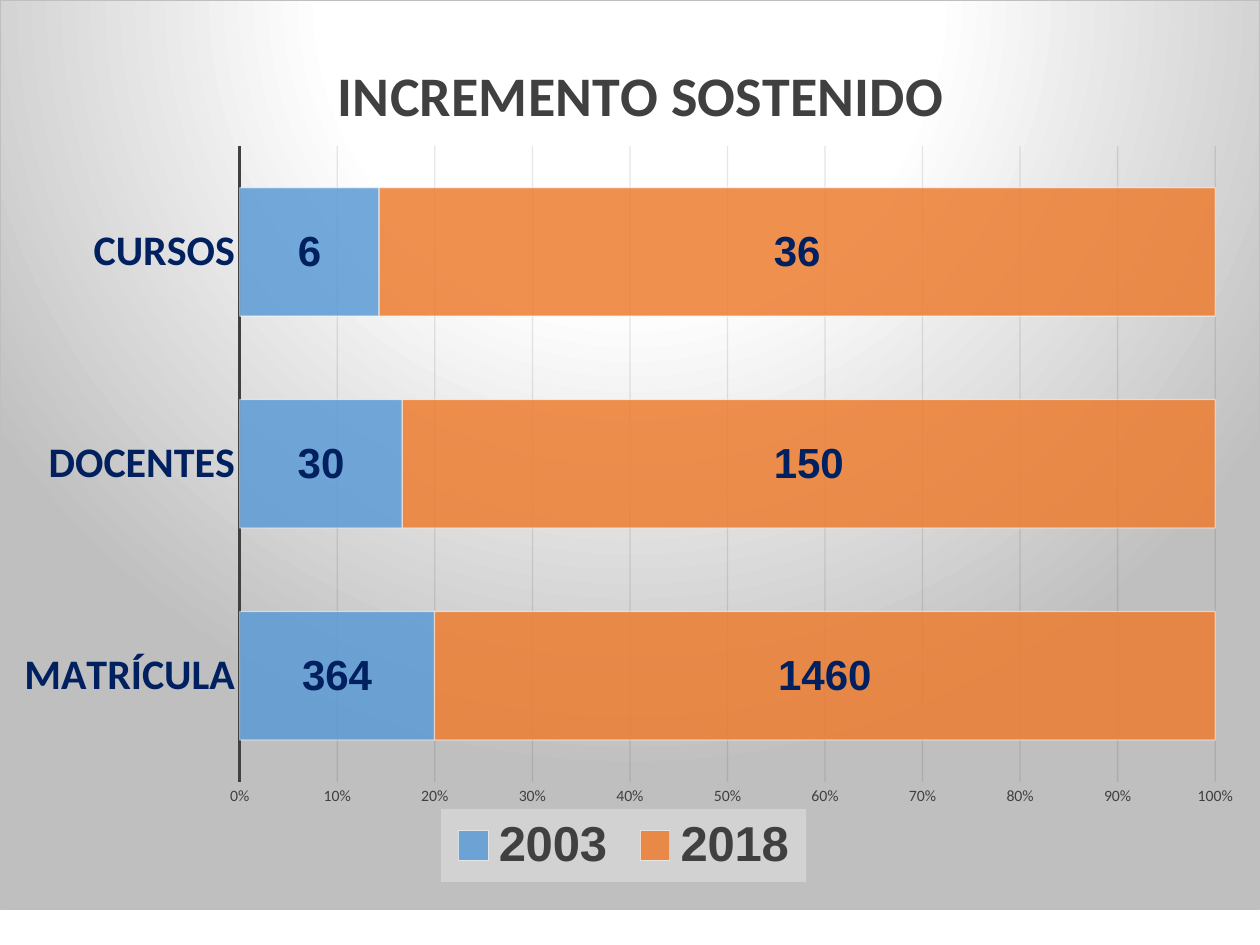
from lxml import etree
from pptx import Presentation
from pptx.chart.data import CategoryChartData
from pptx.dml.color import RGBColor
from pptx.enum.chart import XL_CHART_TYPE, XL_LEGEND_POSITION, XL_TICK_MARK
from pptx.oxml import parse_xml
from pptx.oxml.ns import nsdecls, qn
from pptx.util import Inches, Pt

COLORS = {"2003": "5B9BD5", "2018": "ED7D31", "navy": "002060", "gray": "404040",
          "border": "BFBFBF", "grid": "0D0D0D", "white": "FFFFFF", "legend": "F2F2F2"}


def style_font(font, name, size, color, bold):
    values = {"name": name, "size": Pt(size), "bold": bold}
    for attribute, value in values.items():
        setattr(font, attribute, value)
    font.color.rgb = RGBColor.from_string(COLORS[color])


def place(part, index, **fractions):
    for old_layout in part.findall(qn("c:layout")):
        part.remove(old_layout)
    layout = parse_xml(f"<c:layout {nsdecls('c')}><c:manualLayout/></c:layout>")
    for key, value in fractions.items():
        etree.SubElement(layout[0], qn(f"c:{key}")).set("val", str(value))
    part.insert(index, layout)


prs = Presentation()
prs.slide_width, prs.slide_height = Inches(10), Inches(7.5)
slide = prs.slides.add_slide(prs.slide_layouts[6])

growth = CategoryChartData()
growth.categories = ["MATRÍCULA", "DOCENTES", "CURSOS"]
growth.add_series("2003", (364, 30, 6))
growth.add_series("2018", (1460, 150, 36))
chart = slide.shapes.add_chart(XL_CHART_TYPE.BAR_STACKED_100, 0, 0,
                               Inches(10), Inches(7.22), growth).chart
chart.font.name, chart.font.size = "Calibri", Pt(10)

chart.has_title = True
heading = chart.chart_title.text_frame
heading.text = "INCREMENTO SOSTENIDO"
style_font(heading.paragraphs[0].runs[0].font, "Calibri", 32, "gray", True)

plot = chart.plots[0]
plot.gap_width, plot.overlap, plot.vary_by_categories = 65, 100, False
faded = []
for series in plot.series:
    series.format.fill.solid()
    series.format.fill.fore_color.rgb = RGBColor.from_string(COLORS[series.name])
    series.format.line.color.rgb = RGBColor.from_string(COLORS["white"])
    series.format.line.width = Pt(0.75)
    labels = series.data_labels
    labels.show_value = True
    style_font(labels.font, "Arial", 24, "navy", True)

categories, percent = chart.category_axis, chart.value_axis
for axis in (categories, percent):
    axis.major_tick_mark = axis.minor_tick_mark = XL_TICK_MARK.NONE
style_font(categories.tick_labels.font, "Calibri", 24, "navy", True)
categories.format.line.color.rgb = RGBColor.from_string(COLORS["gray"])
categories.format.line.width = Pt(1.5)
style_font(percent.tick_labels.font, "Calibri", 9, "gray", False)
percent.tick_labels.number_format = "0%"
percent.tick_labels.number_format_is_linked = False
percent.format.line.fill.background()
percent.has_major_gridlines = True
grid_line = percent.major_gridlines.format.line
grid_line.color.rgb = RGBColor.from_string(COLORS["grid"])
grid_line.width = Pt(0.75)

chart.has_legend = True
chart.legend.position = XL_LEGEND_POSITION.BOTTOM
chart.legend.include_in_layout = False
style_font(chart.legend.font, "Arial", 28, "gray", True)

chart_body = chart.chart_title.text_frame._txBody.getroottree().getroot().find(qn("c:chart"))
for tag, opacities in (("c:ser", (85, 50)), ("c:majorGridlines", (10,))):
    for element in chart_body.iter(qn(tag)):
        colors = list(element.find(qn("c:spPr")).iter(qn("a:srgbClr")))
        for color, opacity in zip(colors, opacities):
            etree.SubElement(color, qn("a:alpha")).set("val", str(opacity * 1000))

legend_box = chart_body.find(qn("c:legend"))
place(chart_body.find(qn("c:title")), 1, xMode="edge", yMode="edge", x=0.26, y=0.05)
place(chart_body.find(qn("c:plotArea")), 0, layoutTarget="inner",
      xMode="edge", yMode="edge", x=0.19, y=0.16, w=0.775, h=0.7)
place(legend_box, 1, xMode="edge", yMode="edge", x=0.35, y=0.89, w=0.29, h=0.08)
legend_box.find(qn("c:overlay")).addnext(parse_xml(
    f'<c:spPr {nsdecls("c", "a")}><a:solidFill><a:srgbClr val="{COLORS["legend"]}">'
    '<a:alpha val="39000"/></a:srgbClr></a:solidFill></c:spPr>'))

stops = "".join(f'<a:gs pos="{position * 1000}"><a:srgbClr val="{COLORS[color]}"/></a:gs>'
                for position, color in ((0, "white"), (39, "white"), (100, "border")))
chart_body.addnext(parse_xml(
    f'<c:spPr {nsdecls("c", "a")}><a:gradFill><a:gsLst>{stops}</a:gsLst>'
    '<a:path path="circle"><a:fillToRect l="50000" t="-80000" r="50000" b="180000"/>'
    f'</a:path></a:gradFill><a:ln w="{Pt(0.75)}"><a:solidFill>'
    f'<a:srgbClr val="{COLORS["border"]}"/></a:solidFill></a:ln></c:spPr>'))

prs.save("out.pptx")
